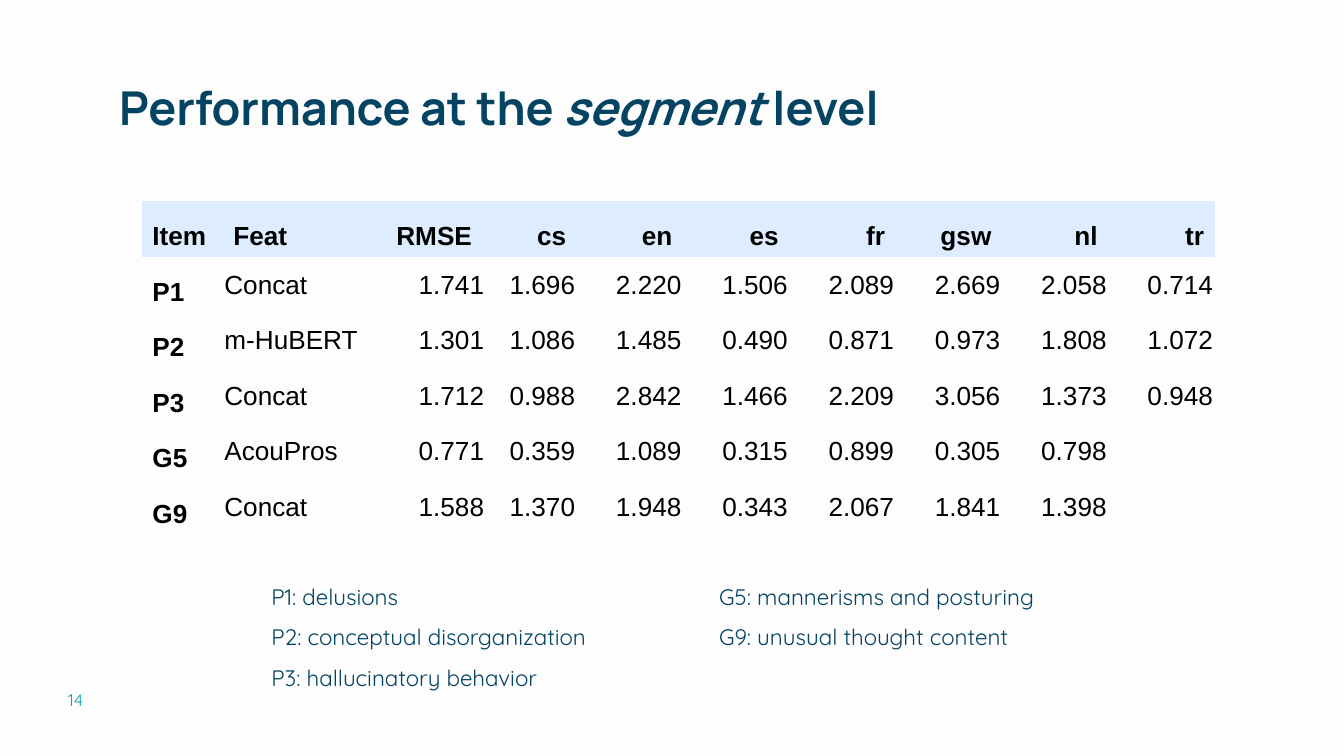
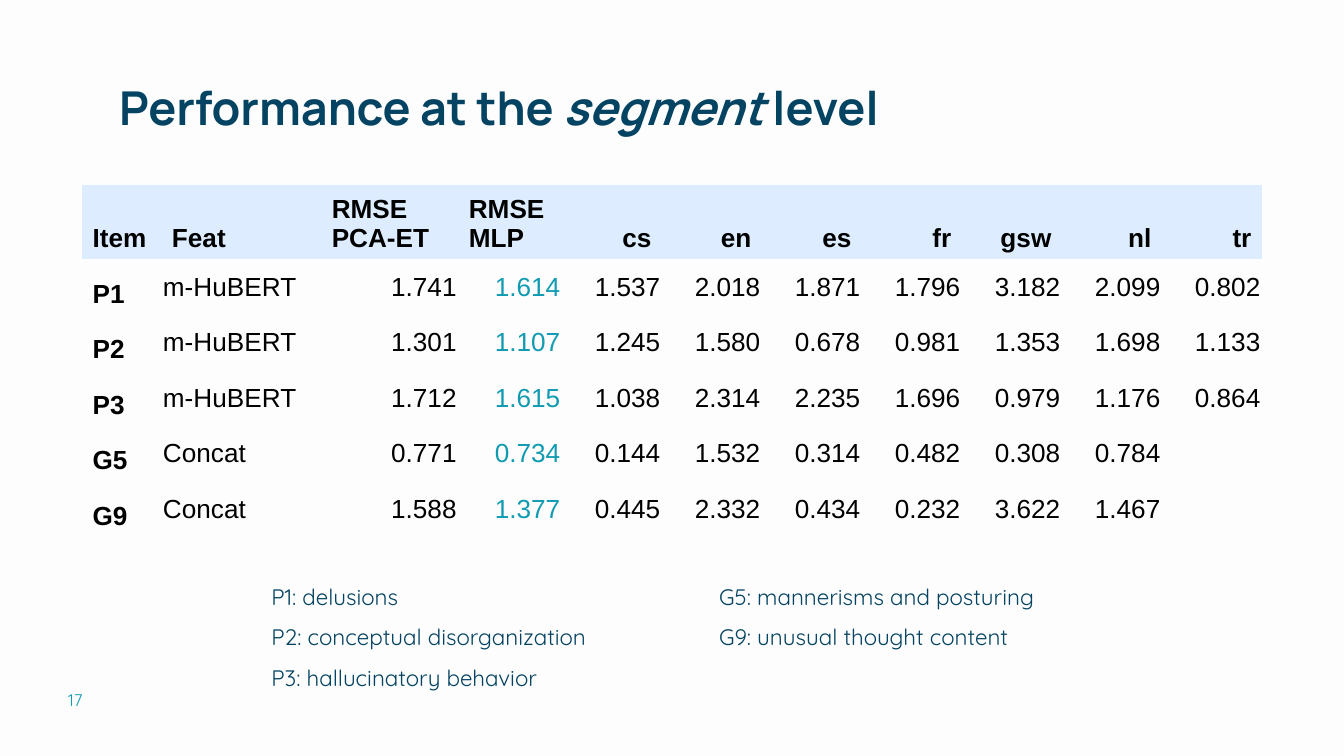
from dataclasses import dataclass

from pptx import Presentation
from pptx.dml.color import RGBColor
from pptx.enum.text import MSO_ANCHOR, MSO_AUTO_SIZE, PP_ALIGN
from pptx.oxml.ns import qn
from pptx.util import Cm, Pt


@dataclass(frozen=True)
class Theme:
    paper: str = "FDFDFD"
    navy: str = "044362"
    teal: str = "119BB2"
    black: str = "000000"
    header_band: str = "DDEDFF"
    title_font: str = "Manrope"
    body_font: str = "Quicksand"
    table_font: str = "Arial"
    title_size: int = 25
    table_size: int = 14
    legend_size: int = 12
    number_size: int = 9
    plain_table: str = "{2D5ABB26-0587-4C30-8999-92F81FD0307C}"


TITLE = [("Performance at the ", False), ("segment", True), (" level", False)]
POSITIVE_ITEMS = ["P1: delusions", "P2: conceptual disorganization",
                  "P3: hallucinatory behavior"]
GENERAL_ITEMS = ["G5: mannerisms and posturing", "G9: unusual thought content"]
LANGUAGES = ["cs", "en", "es", "fr", "gsw", "nl", "tr"]

BASELINE_SCORES = [
    ["Item", "Feat", "RMSE", *LANGUAGES],
    ["P1", "Concat", "1.741", "1.696", "2.220", "1.506", "2.089", "2.669", "2.058", "0.714"],
    ["P2", "m-HuBERT", "1.301", "1.086", "1.485", "0.490", "0.871", "0.973", "1.808", "1.072"],
    ["P3", "Concat", "1.712", "0.988", "2.842", "1.466", "2.209", "3.056", "1.373", "0.948"],
    ["G5", "AcouPros", "0.771", "0.359", "1.089", "0.315", "0.899", "0.305", "0.798", ""],
    ["G9", "Concat", "1.588", "1.370", "1.948", "0.343", "2.067", "1.841", "1.398", ""],
]
MLP_SCORES = [
    ["Item", "Feat", "RMSE PCA-ET", "RMSE MLP", *LANGUAGES],
    ["P1", "m-HuBERT", "1.741", "1.614", "1.537", "2.018", "1.871", "1.796", "3.182", "2.099",
     "0.802"],
    ["P2", "m-HuBERT", "1.301", "1.107", "1.245", "1.580", "0.678", "0.981", "1.353", "1.698",
     "1.133"],
    ["P3", "m-HuBERT", "1.712", "1.615", "1.038", "2.314", "2.235", "1.696", "0.979", "1.176",
     "0.864"],
    ["G5", "Concat", "0.771", "0.734", "0.144", "1.532", "0.314", "0.482", "0.308", "0.784", ""],
    ["G9", "Concat", "1.588", "1.377", "0.445", "2.332", "0.434", "0.232", "3.622", "1.467", ""],
]


class Deck:
    def __init__(self, theme):
        self.theme = theme
        self.presentation = Presentation()
        self.presentation.slide_width = Cm(25.4)
        self.presentation.slide_height = Cm(14.29)
        self.slide = None

    def new_slide(self):
        self.slide = self.presentation.slides.add_slide(self.presentation.slide_layouts[6])
        background = self.slide.background.fill
        background.solid()
        background.fore_color.rgb = RGBColor.from_string(self.theme.paper)

    def add_run(self, paragraph, text, font, size, color, bold=False, italic=False):
        run = paragraph.add_run()
        run.text = text
        run.font.name = font
        run.font.size = Pt(size)
        run.font.bold = bold
        run.font.italic = italic
        run.font.color.rgb = RGBColor.from_string(color)

    def text_frame(self, left, top, width, height):
        frame = self.slide.shapes.add_textbox(
            Cm(left), Cm(top), Cm(width), Cm(height)).text_frame
        frame.word_wrap = True
        frame.margin_left = frame.margin_right = Cm(0.25)
        frame.margin_top = frame.margin_bottom = Cm(0.25)
        return frame

    def title(self, parts):
        heading = self.text_frame(2, 1.24, 21.41, 1.6).paragraphs[0]
        for text, italic in parts:
            self.add_run(heading, text, self.theme.title_font, self.theme.title_size,
                         self.theme.navy, bold=True, italic=italic)

    def slide_number(self, number):
        footer = self.text_frame(1.04, 12.85, 5.16, 0.79).paragraphs[0]
        self.add_run(footer, str(number), self.theme.body_font, self.theme.number_size,
                     self.theme.teal)

    def legend(self, items, left, height):
        frame = self.text_frame(left, 10.52, 8.89, height)
        frame.auto_size = MSO_AUTO_SIZE.SHAPE_TO_FIT_TEXT
        for index, item in enumerate(items):
            line = frame.add_paragraph() if index else frame.paragraphs[0]
            line.line_spacing = 1.5
            self.add_run(line, item, self.theme.body_font, self.theme.legend_size,
                         self.theme.navy)

    def score_table(self, scores, left, top, widths, row_height=1.05):
        """Draw the scores; a column headed "RMSE MLP" is highlighted."""
        header = scores[0]
        graphic = self.slide.shapes.add_table(
            len(scores), len(header), Cm(left), Cm(top),
            Cm(sum(widths)), Cm(row_height * len(scores)))
        table = graphic.table
        table.first_row = table.horz_banding = False
        next(graphic.element.iter(qn("a:tableStyleId"))).text = self.theme.plain_table
        for column, width in zip(table.columns, widths):
            column.width = Cm(width)
        for row_index, values in enumerate(scores):
            table.rows[row_index].height = Cm(row_height)
            for column_index, value in enumerate(values):
                is_header = row_index == 0
                right = (header[column_index] in LANGUAGES
                         or not is_header and column_index > 1)
                highlight = not is_header and header[column_index] == "RMSE MLP"
                self.score_cell(table.cell(row_index, column_index), value, is_header,
                                is_header or column_index == 0, right, highlight)

    def score_cell(self, cell, value, is_header, is_label, right, highlight):
        if is_header:
            cell.fill.solid()
            cell.fill.fore_color.rgb = RGBColor.from_string(self.theme.header_band)
        else:
            cell.fill.background()
        cell.vertical_anchor = MSO_ANCHOR.BOTTOM if is_label else MSO_ANCHOR.MIDDLE
        cell.margin_left = cell.margin_right = Cm(0.2 if is_label else 0.03)
        cell.margin_top = Cm(0.1 if is_label else 0.03)
        cell.margin_bottom = Cm(0.1 if is_label else 0)
        paragraph = cell.text_frame.paragraphs[0]
        paragraph.alignment = PP_ALIGN.RIGHT if right else PP_ALIGN.LEFT
        if value:
            color = self.theme.teal if highlight else self.theme.black
            self.add_run(paragraph, value, self.theme.table_font, self.theme.table_size,
                         color, bold=is_label)

    def score_slide(self, number, scores, left, top, widths):
        self.new_slide()
        self.slide_number(number)
        self.title(TITLE)
        self.score_table(scores, left, top, widths)
        self.legend(GENERAL_ITEMS, left=13.34, height=2.06)
        self.legend(POSITIVE_ITEMS, left=4.88, height=2.82)


def main():
    deck = Deck(Theme())
    deck.score_slide(14, BASELINE_SCORES, 2.68, 3.8, [1.53, 3.08, 1.89, 1.72] + [2.01] * 6)
    deck.score_slide(17, MLP_SCORES, 1.55, 3.5, [1.5, 3.02, 2.59, 1.96] + [1.89] * 7)
    deck.presentation.save("out.pptx")


if __name__ == "__main__":
    main()
